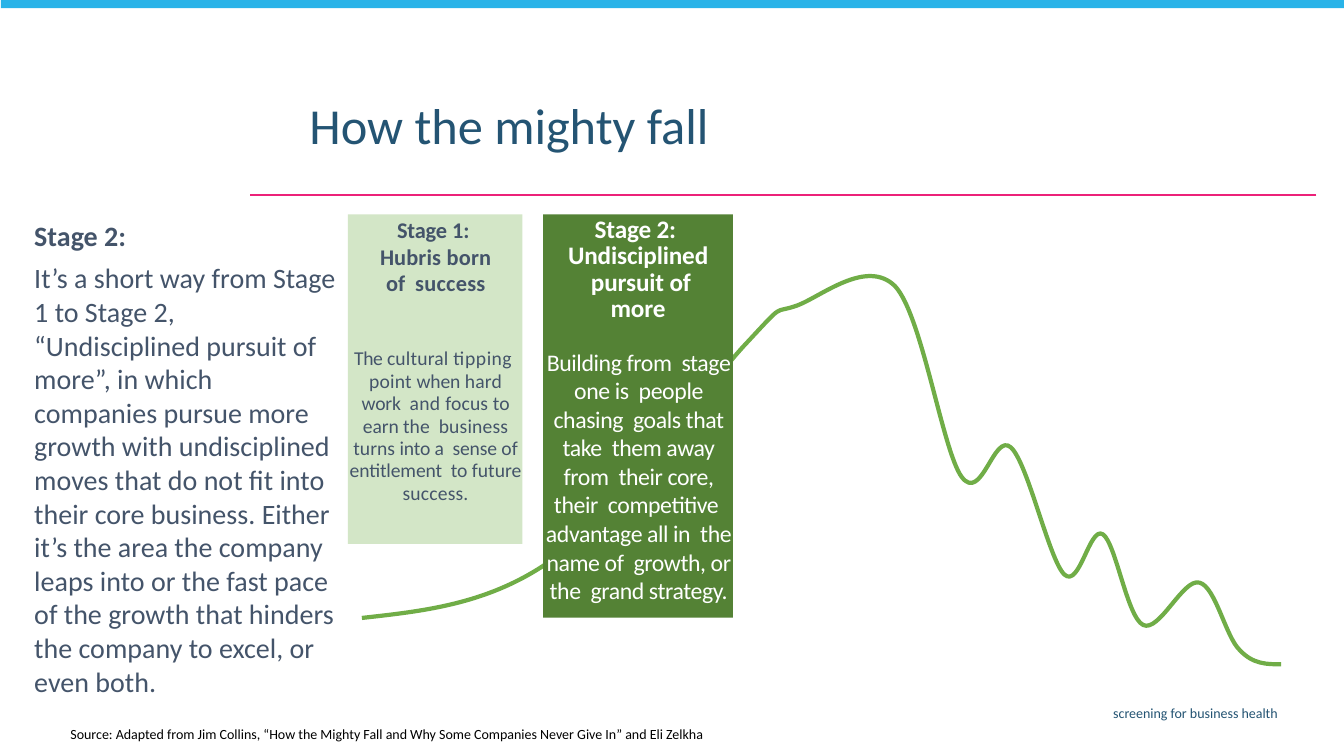
from lxml import etree
from pptx import Presentation
from pptx.dml.color import RGBColor
from pptx.enum.shapes import MSO_CONNECTOR, MSO_SHAPE
from pptx.enum.text import MSO_ANCHOR, MSO_AUTO_SIZE, PP_ALIGN
from pptx.oxml.ns import qn
from pptx.util import Pt

LEFT, CENTER, RIGHT = PP_ALIGN.LEFT, PP_ALIGN.CENTER, PP_ALIGN.RIGHT
TOP, BOTTOM = MSO_ANCHOR.TOP, MSO_ANCHOR.BOTTOM
NAVY, SLATE, WHITE, BLACK = "245473", "44546A", "FFFFFF", "000000"
GREEN, DARK_GREEN, PINK, SKY = "70AD47", "548235", "EC2179", "29B3E8"
INSETS = (7.2, 3.6, 7.2, 3.6)
CARD_INSETS = (0, 1.6, 0, 0)

# Content: each paragraph has runs of (text, letter spacing) and formats
TITLE = [{"runs": [("How the mighty fall", 0)], "font": (36, NAVY, False),
          "format": {"alignment": LEFT, "line_spacing": 0.9}}]
FOOTER = [{"runs": [("screening for business health", 0)],
           "font": (10, NAVY, False), "format": {"alignment": RIGHT}}]
SOURCE = [{"runs": [("Source: Adapted from Jim Collins, “How the Mighty Fall and Why "
                     "Some Companies Never Give In” and Eli Zelkha", 0)],
           "font": (10, BLACK, False), "format": {}}]
STORY = [
    {"runs": [("Stage 2:", 0)], "font": (20, SLATE, True), "format": {}},
    {"runs": [("It’s a short way from Stage 1 to Stage 2, “Undisciplined pursuit of "
               "more”, in which companies pursue more growth with undisciplined moves "
               "that do not fit into their core business. Either it’s the area the "
               "company leaps into or the fast pace of the growth that hinders the "
               "company to excel, or even both.", 0)],
     "font": (20, SLATE, False), "format": {"space_before": Pt(6)}},
]
HEADING = {"alignment": CENTER, "line_spacing": Pt(19)}
STAGE_1 = [
    {"runs": [("Stage ", -0.1), ("1:  ", 0), ("Hubris ", 0.1), ("born ", 0.2),
              ("of  ", 0), ("success", 0.2)],
     "font": (16, SLATE, True), "margins": (17.3, 16.3), "format": HEADING},
    {"runs": [("The ", -0.3), ("cultural ", 0.1), ("tipping  ", 0.3), ("point ", 0.1),
              ("when ", -0.1), ("hard ", 0.1), ("work  ", -0.1), ("and ", 0.2),
              ("focus ", 0.1), ("to ", 0), ("earn ", -0.1), ("the  ", 0),
              ("business ", 0.1), ("turns ", 0), ("into a  sense ", -0.1), ("of ", 0),
              ("entitlement  ", -0.1), ("to future ", 0), ("success.", 0.1)],
     "font": (14, SLATE, False), "margins": (0.7, 0),
     "format": {"alignment": CENTER, "line_spacing": Pt(16), "space_before": Pt(36.4)}},
]
STAGE_2 = [
    {"runs": [("Stage 2:  Undisciplined  pursuit of more", -0.1)],
     "font": (18, WHITE, True), "margins": (17.3, 17.3), "format": HEADING},
    {"runs": [("Building from  stage one is  people chasing  goals that take  them away "
               "from  their core, their  competitive  advantage all in  the name of  "
               "growth, or the  grand strategy.", -0.3)],
     "font": (17, WHITE, False), "margins": (0.7, 0),
     "format": {"alignment": CENTER, "space_before": Pt(17.3)}},
]

# Rise and fall curve: frame corners, start, then two handles and an end per segment
CURVE_FRAME = [(258.5, 197.3), (915.1, 474.5)]
CURVE_START = (258.5, 441.4)
CURVE = [
    ((304.6, 436.3), (351.4, 431.3), (396.7, 398.2)),
    ((442.8, 365.8), (504.7, 275), (533.5, 244.8)),
    ((561.6, 214.6), (551.5, 224.6), (569.5, 218.2)),
    ((586.8, 211.7), (619.2, 184.3), (639.4, 204.5)),
    ((658.8, 225.4), (673.2, 321.8), (686.9, 340.6)),
    ((701.3, 360), (709.9, 308.2), (722.2, 319.7)),
    ((734.4, 331.2), (749.5, 400.3), (760.3, 410.4)),
    ((771.1, 420.5), (778.3, 375.8), (787.7, 381.6)),
    ((797, 387.4), (805, 440.6), (816.5, 446.4)),
    ((828, 452.2), (845.3, 412.6), (856.8, 416.2)),
    ((868.3, 419), (875.5, 455), (885.6, 464.4)),
    ((895, 474.5), (905, 474.5), (915.1, 474.5)),
]


def color(value):
    return RGBColor.from_string(value)


def write(shape, paragraphs, insets=INSETS, anchor=TOP):
    frame = shape.text_frame
    left, top, right, bottom = map(Pt, insets)
    settings = {"word_wrap": True, "auto_size": MSO_AUTO_SIZE.NONE,
                "vertical_anchor": anchor, "margin_left": left, "margin_top": top,
                "margin_right": right, "margin_bottom": bottom}
    for name, value in settings.items():
        setattr(frame, name, value)
    for index, content in enumerate(paragraphs):
        para = frame.add_paragraph() if index else frame.paragraphs[0]
        for name, value in ({"space_before": Pt(0)} | content["format"]).items():
            setattr(para, name, value)
        if "margins" in content:
            properties = para._p.get_or_add_pPr()
            for name, value in zip(("marL", "marR"), content["margins"]):
                properties.set(name, str(int(Pt(value))))
            properties.set("indent", "0")
        size, ink, bold = content["font"]
        for text, spacing in content["runs"]:
            span = para.add_run()
            span.text = text
            for name, value in {"name": "Calibri", "size": Pt(size), "bold": bold}.items():
                setattr(span.font, name, value)
            span.font.color.rgb = color(ink)
            if spacing:
                span._r.get_or_add_rPr().set("spc", str(round(spacing * 100)))


def add_box(page, place, paragraphs, anchor=TOP):
    box = page.shapes.add_textbox(*map(Pt, place))
    write(box, paragraphs, anchor=anchor)


def add_block(page, place, fill):
    block = page.shapes.add_shape(MSO_SHAPE.RECTANGLE, *map(Pt, place))
    block.shadow.inherit = False
    block.fill.solid()
    block.fill.fore_color.rgb = color(fill)
    block.line.fill.background()
    return block


def add_curve(page):
    corner, opposite = CURVE_FRAME
    builder = page.shapes.build_freeform(*map(Pt, corner))
    builder.add_line_segments([tuple(map(Pt, opposite))], close=False)
    curve = builder.convert_to_shape()
    # Bend the outline: cubic segments, measured from the frame's corner
    outline = curve._element.spPr.find(".//" + qn("a:path"))
    for step in list(outline):
        outline.remove(step)
    for kind, points in [("a:moveTo", [CURVE_START])] + [("a:cubicBezTo", s) for s in CURVE]:
        step = etree.SubElement(outline, qn(kind))
        for x, y in points:
            point = etree.SubElement(step, qn("a:pt"))
            point.set("x", str(int(Pt(x - corner[0]))))
            point.set("y", str(int(Pt(y - corner[1]))))
    curve.shadow.inherit = False
    curve.fill.background()
    curve.line.color.rgb = color(GREEN)
    curve.line.width = Pt(3)


def main():
    deck = Presentation()
    deck.slide_width, deck.slide_height = Pt(960), Pt(540)
    page = deck.slides.add_slide(deck.slide_layouts[5])

    # Frame: rule, top bar and footer
    rule = page.shapes.add_connector(MSO_CONNECTOR.STRAIGHT, Pt(940.3), Pt(139),
                                     Pt(178.6), Pt(139))
    rule.line.color.rgb = color(PINK)
    rule.line.width = Pt(1.5)
    etree.SubElement(rule._element.spPr, qn("a:effectLst"))
    add_block(page, (0.7, -1.4, 960.5, 7.2), SKY)
    add_box(page, (262.4, 499.7, 657.4, 20.9), FOOTER)

    # Title
    title = page.shapes.title
    title.left, title.top, title.width, title.height = map(Pt, (213.8, 68.4, 697, 54.7))
    write(title, TITLE)

    # Story, stages and the curve that runs between them
    add_box(page, (17.4, 152.8, 230.4, 352), STORY)
    stage_1 = add_block(page, (248.4, 153.2, 124.8, 235.4), GREEN)
    tint = stage_1._element.spPr.find(".//" + qn("a:srgbClr"))
    etree.SubElement(tint, qn("a:alpha")).set("val", "30000")
    write(stage_1, STAGE_1, CARD_INSETS)
    add_curve(page)
    stage_2 = add_block(page, (388, 153.2, 135.6, 288), DARK_GREEN)
    write(stage_2, STAGE_2, CARD_INSETS)

    # Source
    add_box(page, (43.2, 514.1, 509.8, 19.4), SOURCE, BOTTOM)
    deck.save("out.pptx")


if __name__ == "__main__":
    main()
